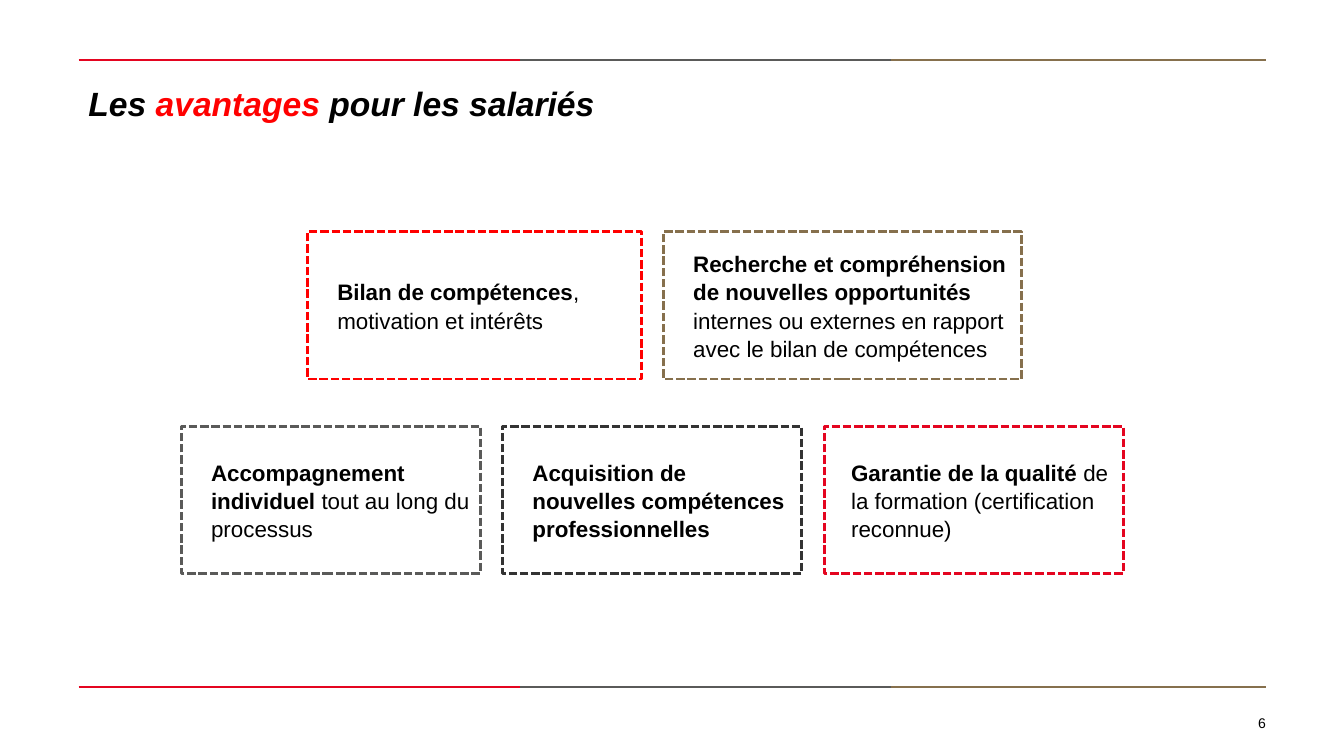
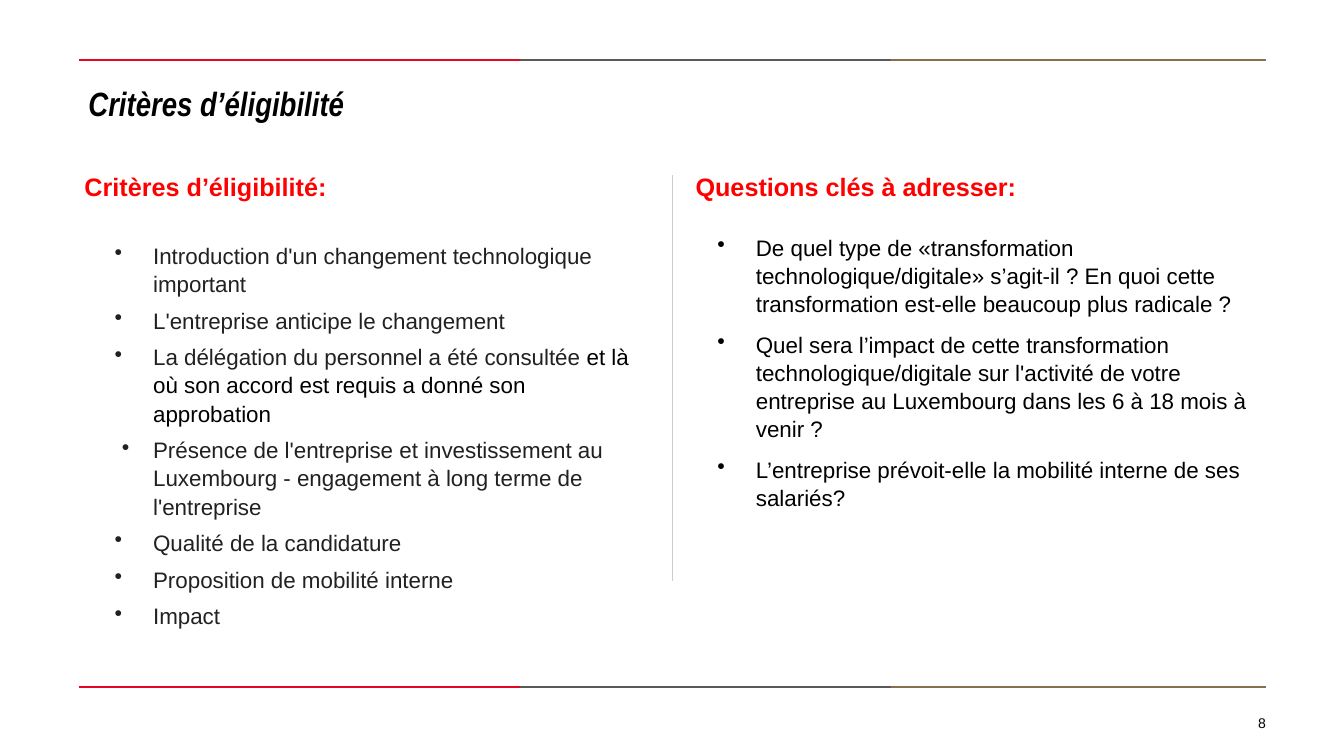
from itertools import pairwise

from lxml.etree import SubElement
from pptx import Presentation
from pptx.dml.color import RGBColor
from pptx.enum.dml import MSO_LINE
from pptx.enum.shapes import MSO_CONNECTOR, MSO_SHAPE
from pptx.enum.text import MSO_ANCHOR, PP_ALIGN
from pptx.oxml.ns import qn
from pptx.util import Cm, Pt

COLOURS = {
    "black": "000000",
    "ink": "212121",
    "bright": "FF0000",
    "red": "E40520",
    "grey": "5A5A59",
    "charcoal": "333333",
    "tan": "86704D",
    "divider": "CCCCCC",
}
LEFT, RIGHT = 1.98, 31.9
BAND_STOPS = [LEFT, 13.11, 22.45, RIGHT]
BAND_COLOURS = ["red", "grey", "tan"]
BAND_TOPS = [1.52, 17.32]
LINE_SPACING = 1.05


def colour(name):
    return RGBColor.from_string(COLOURS[name])


class DeckBuilder:
    """Holds the shared style and the current slide."""

    def __init__(self):
        self.deck = Presentation()
        self.deck.slide_width, self.deck.slide_height = Cm(33.87), Cm(19.05)
        self.page = None

    def add_page(self, title_spans, number, title_font="Arial"):
        self.page = self.deck.slides.add_slide(self.deck.slide_layouts[6])
        # Three-colour bands at top and bottom
        for top in BAND_TOPS:
            for (start, end), name in zip(pairwise(BAND_STOPS), BAND_COLOURS):
                self.line(start, top, end, top, name, 1.5)
        # Title
        frame = self.text_box(LEFT, 1.9, RIGHT - LEFT, 2.54, 0.25, 0.13)
        self.add_spans(frame.paragraphs[0], title_spans, 24, title_font,
                       bold=True, italic=True)
        # Page number
        frame = self.text_box(26.24, 17.98, RIGHT - 26.24, 0.43)
        frame.paragraphs[0].alignment = PP_ALIGN.RIGHT
        self.add_spans(frame.paragraphs[0], [(number, "black")], 10)

    def line(self, x1, y1, x2, y2, name, width):
        line = self.page.shapes.add_connector(
            MSO_CONNECTOR.STRAIGHT, Cm(x1), Cm(y1), Cm(x2), Cm(y2))
        line.line.color.rgb = colour(name)
        line.line.width = Pt(width)
        SubElement(line._element.spPr, qn("a:effectLst"))

    def text_box(self, left, top, width, height, side=0, edge=0):
        box = self.page.shapes.add_textbox(Cm(left), Cm(top), Cm(width), Cm(height))
        return self.prepare(box.text_frame, side, edge)

    def prepare(self, frame, side, edge):
        frame.word_wrap = True
        frame.margin_left = frame.margin_right = Cm(side)
        frame.margin_top = frame.margin_bottom = Cm(edge)
        return frame

    def add_spans(self, para, spans, size, font="Arial", bold=False, italic=False):
        """Each span is (text, colour) or (text, colour, bold)."""
        para.line_spacing = LINE_SPACING
        for text, name, *weight in spans:
            span = para.add_run()
            span.text = text
            span.font.name, span.font.size = font, Pt(size)
            span.font.bold = weight[0] if weight else bold
            span.font.italic = italic
            span.font.color.rgb = colour(name)

    def indent(self, para, margin, first=0):
        properties = para._p.get_or_add_pPr()
        properties.set("marL", str(Cm(margin)))
        properties.set("indent", str(Cm(first)))
        return properties

    def card(self, left, top, width, height, outline, strong, plain, margin):
        box = self.page.shapes.add_shape(
            MSO_SHAPE.RECTANGLE, Cm(left), Cm(top), Cm(width), Cm(height))
        box.shadow.inherit = False
        box.fill.background()
        box.line.color.rgb = colour(outline)
        box.line.width = Pt(2)
        box.line.dash_style = MSO_LINE.SQUARE_DOT
        frame = self.prepare(box.text_frame, 0.25, 0.13)
        frame.vertical_anchor = MSO_ANCHOR.MIDDLE
        para = frame.paragraphs[0]
        para.alignment = PP_ALIGN.LEFT
        self.indent(para, margin)
        spans = [(strong, "black", True)]
        if plain:
            spans.append((plain, "black", False))
        self.add_spans(para, spans, 16)

    def card_row(self, left, top, cards, height=3.71, gap=0.56):
        for width, outline, strong, plain, margin in cards:
            self.card(left, top, width, height, outline, strong, plain, margin)
            left += width + gap

    def bullet_column(self, left, height, heading, items, margin, heading_gap, item_gap):
        """Each item is (spans, hanging indent)."""
        frame = self.text_box(left, 4.29, 13.94, height)
        para = frame.paragraphs[0]
        para.space_after = Pt(heading_gap)
        self.add_spans(para, [(heading, "bright")], 18, bold=True)
        for spans, hanging in items:
            para = frame.add_paragraph()
            properties = self.indent(para, margin, -hanging)
            SubElement(properties, qn("a:buChar"), char="•")
            para.space_after = Pt(item_gap)
            self.add_spans(para, spans, 16)


def main():
    builder = DeckBuilder()

    # Benefits for employees
    builder.add_page([("Les ", "black"), ("avantages", "bright"),
                      (" pour les salariés", "black")], "6")
    builder.card_row(7.75, 5.84, [
        (8.41, "bright", "Bilan de compétences", ", motivation et intérêts", 0.5),
        (9.02, "tan", "Recherche et compréhension de nouvelles opportunités ",
         "internes ou externes en rapport avec le bilan de compétences", 0.5),
    ])
    builder.card_row(4.57, 10.74, [
        (7.54, "grey", "Accompagnement individuel ", "tout au long du processus", 0.5),
        (7.54, "charcoal", "Acquisition de nouvelles compétences professionnelles",
         "", 0.5),
        (7.54, "red", "Garantie de la qualité",
         " de la formation (certification reconnue)", 0.43),
    ])

    # Eligibility criteria and key questions
    builder.add_page([("Critères d’éligibilité", "black")], "8", "Arial Narrow")
    hanging = 0.97
    criteria = [
        ([("Introduction d'un changement technologique important", "ink")], hanging),
        ([("L'entreprise anticipe le changement", "ink")], hanging),
        ([("La délégation du personnel a été consultée ", "ink"),
          ("et là où son accord est requis a donné son approbation", "black")], hanging),
        ([("Présence de l'entreprise et investissement au Luxembourg - "
           "engagement à long terme de l'entreprise", "ink")], 0.79),
        ([("Qualité de la candidature", "ink")], hanging),
        ([("Proposition de mobilité interne", "ink")], hanging),
        ([("Impact", "ink")], hanging),
    ]
    questions = [
        "De quel type de «transformation technologique/digitale» s’agit-il ? "
        "En quoi cette transformation est-elle beaucoup plus radicale ?",
        "Quel sera l’impact de cette transformation technologique/digitale sur "
        "l'activité de votre entreprise au Luxembourg dans les 6 à 18 mois à venir ?",
        "L’entreprise prévoit-elle la mobilité interne de ses salariés?",
    ]
    builder.bullet_column(17.53, 8.33, "Questions clés à adresser:",
                          [([(text, "black")], hanging) for text in questions],
                          1.52, 21.7, 9)
    builder.bullet_column(2.13, 11.25, "Critères d’éligibilité:", criteria,
                          1.73, 27.7, 6)
    builder.line(16.94, 4.42, 16.94, 14.63, "divider", 0.75)

    builder.deck.save("out.pptx")


if __name__ == "__main__":
    main()
